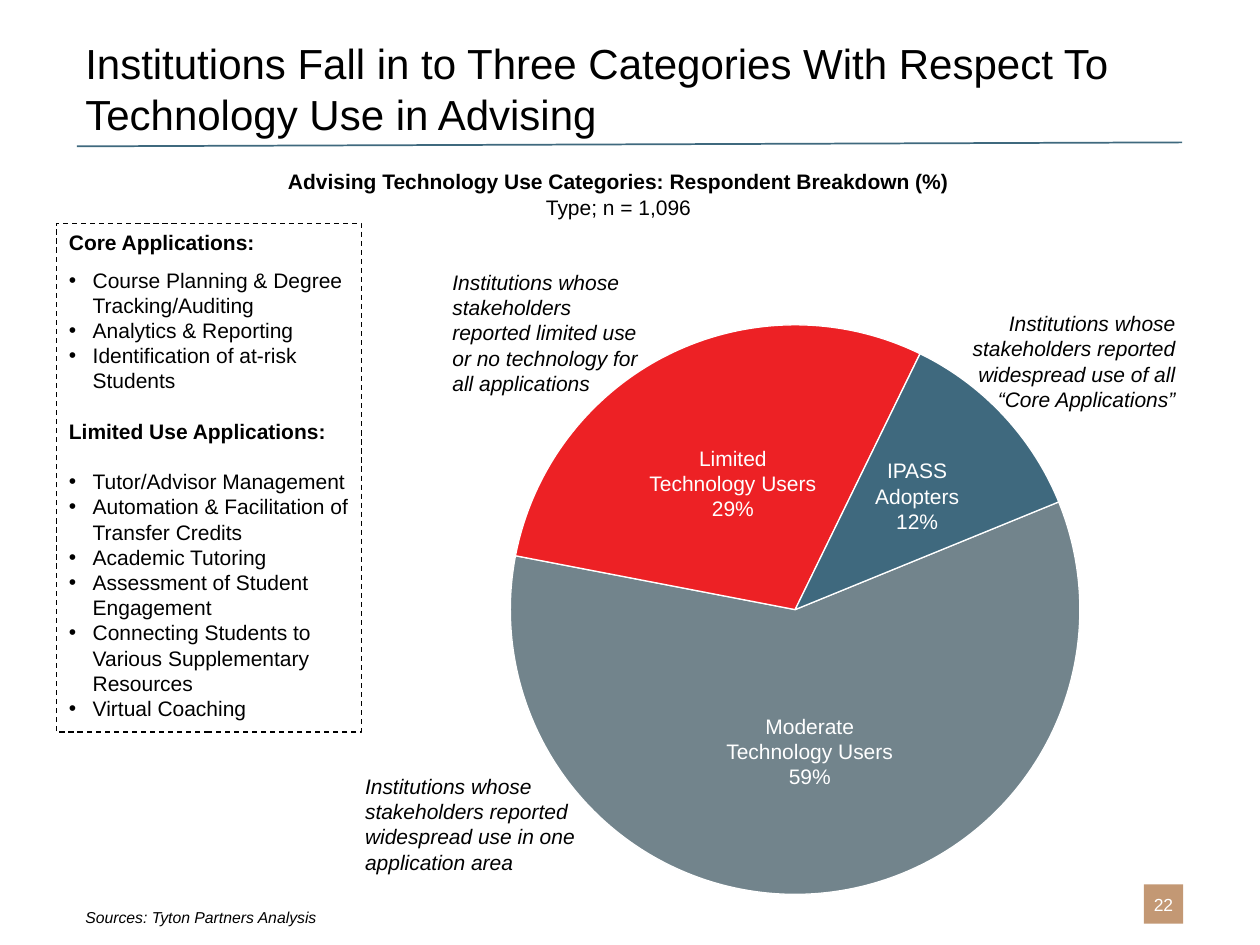
from lxml.etree import SubElement
from pptx import Presentation
from pptx.dml.color import RGBColor
from pptx.enum.dml import MSO_LINE
from pptx.enum.shapes import MSO_CONNECTOR, MSO_SHAPE
from pptx.enum.text import MSO_ANCHOR, PP_ALIGN
from pptx.oxml.ns import qn
from pptx.util import Cm, Pt

FONT = "Arial"
BLACK, WHITE = "000000", "FFFFFF"
BLUE, RED, GREY, TAN = "3F697E", "ED2125", "72848C", "C39874"
LEFT, CENTER, RIGHT = PP_ALIGN.LEFT, PP_ALIGN.CENTER, PP_ALIGN.RIGHT
TOP, MIDDLE, BOTTOM = MSO_ANCHOR.TOP, MSO_ANCHOR.MIDDLE, MSO_ANCHOR.BOTTOM

# name lines, share in %, colour, label box within the pie's box
SLICES = [
    (["Moderate", "Technology Users"], 59.2, GREY, (4.27, 7.82, 3.53, 1.55)),
    (["Limited", "Technology Users"], 29.2, RED, (2.72, 2.41, 3.53, 1.55)),
    (["IPASS", "Adopters"], 11.6, BLUE, (7.26, 2.67, 1.88, 1.55)),
]
START = 337.78  # degrees clockwise from three o'clock

# text, alignment, box relative to the pie's corner
NOTES = [
    ("Institutions whose stakeholders reported widespread use of all “Core Applications”",
     RIGHT, (8.66, -0.41, 5, 2.31)),
    ("Institutions whose stakeholders reported widespread use in one application area",
     LEFT, (-3.18, 8.92, 4.88, 2.31)),
    ("Institutions whose stakeholders reported limited use or no technology for all applications",
     LEFT, (-1.42, -1.24, 4.5, 2.82)),
]

# heading, gap after it in points, applications
GROUPS = [
    ("Core Applications:", 7.2,
     ["Course Planning & Degree Tracking/Auditing", "Analytics & Reporting",
      "Identification of at-risk Students"]),
    ("Limited Use Applications:", 14.4,
     ["Tutor/Advisor Management", "Automation & Facilitation of Transfer Credits",
      "Academic Tutoring", "Assessment of Student Engagement",
      "Connecting Students to Various Supplementary Resources", "Virtual Coaching"]),
]


def color(code):
    return RGBColor.from_string(code)


def place(x, y, w, h):
    return Cm(x), Cm(y), Cm(w), Cm(h)


def write(frame, text, size=12, ink=BLACK, bold=False, italic=False,
          align=LEFT, bullet=False, gap=0):
    """Add one paragraph, using the empty first one when there is one."""
    first = frame.paragraphs[0]
    para = frame.add_paragraph() if first.runs else first
    para.alignment = align
    if gap:
        para.space_before = Pt(gap)
    if bullet:
        props = para._p.get_or_add_pPr()
        props.set("marL", str(Cm(0.48)))
        props.set("indent", str(-Cm(0.48)))
        SubElement(props, qn("a:buFont")).set("typeface", FONT)
        SubElement(props, qn("a:buChar")).set("char", "•")
    run = para.add_run()
    run.text = text
    font = run.font
    font.name, font.size = FONT, Pt(size)
    font.bold, font.italic = bold, italic
    font.color.rgb = color(ink)


def setup(frame, anchor=TOP, wrap=True, inset=None):
    frame.word_wrap, frame.vertical_anchor = wrap, anchor
    if inset is not None:
        frame.margin_left = frame.margin_right = Cm(inset)
        frame.margin_top = frame.margin_bottom = 0
    return frame


def text_box(slide, box, **form):
    return setup(slide.shapes.add_textbox(*place(*box)).text_frame, **form)


def block(slide, kind, box, fill=None, line=None):
    shape = slide.shapes.add_shape(kind, *place(*box))
    shape.shadow.inherit = False
    if fill:
        shape.fill.solid()
        shape.fill.fore_color.rgb = color(fill)
    else:
        shape.fill.background()
    if line:
        shape.line.color.rgb = color(line)
        shape.line.width = Pt(0.75)
    else:
        shape.line.fill.background()
    return shape


def header(slide, x, y, w, h):
    frame = text_box(slide, (x, y, w, h), anchor=BOTTOM)
    write(frame, "Institutions Fall in to Three Categories With Respect To "
                 "Technology Use in Advising", size=24)
    rule = slide.shapes.add_connector(
        MSO_CONNECTOR.STRAIGHT, Cm(x + 0.08), Cm(y + h + 0.03),
        Cm(x + w - 0.04), Cm(y + h - 0.05))
    rule.line.color.rgb = color(BLUE)
    rule.line.width = Pt(1)
    SubElement(rule._element.spPr, qn("a:effectLst"))


def caption(slide, *box):
    frame = text_box(slide, box)
    write(frame, "Advising Technology Use Categories: Respondent Breakdown (%)",
          bold=True, align=CENTER)
    write(frame, "Type; n = 1,096", align=CENTER)


def panel(slide, *box):
    shape = block(slide, MSO_SHAPE.RECTANGLE, box, line=BLACK)
    shape.line.dash_style = MSO_LINE.DASH
    frame = setup(shape.text_frame)
    for order, (head, gap, items) in enumerate(GROUPS):
        write(frame, head, bold=True, gap=14.4 * order)
        for spot, item in enumerate(items):
            write(frame, item, bullet=True, gap=0 if spot else gap)


def pie(slide, x, y, size):
    angle = START
    for _, share, fill, _ in SLICES:
        wedge = block(slide, MSO_SHAPE.PIE, (x, y, size, size), fill, WHITE)
        end = (angle + share * 3.6) % 360
        # adjustments count 100000ths, angles 60000ths of a degree
        wedge.adjustments[0], wedge.adjustments[1] = angle * 0.6, end * 0.6
        angle = end
    for name, share, _, (dx, dy, w, h) in SLICES:
        frame = text_box(slide, (x + dx, y + dy, w, h),
                         anchor=MIDDLE, wrap=False, inset=0.05)
        for line in name + [f"{share:.0f}%"]:
            write(frame, line, ink=WHITE, align=CENTER)
    for text, align, (dx, dy, w, h) in NOTES:
        frame = text_box(slide, (x + dx, y + dy, w, h))
        write(frame, text, italic=True, align=align)


def footer(slide, x, y, w, h):
    frame = text_box(slide, (x, y, 17.48, h), anchor=BOTTOM)
    write(frame, "Sources: Tyton Partners Analysis", size=9, italic=True)
    side = 0.79
    badge = block(slide, MSO_SHAPE.RECTANGLE,
                  (x + w - side, y + 0.81, side, side), TAN)
    frame = setup(badge.text_frame, anchor=MIDDLE, wrap=False, inset=0)
    write(frame, "22", size=10, ink=WHITE, align=CENTER)


def main():
    deck = Presentation()
    deck.slide_width, deck.slide_height = Cm(25.4), Cm(19.05)
    slide = deck.slides.add_slide(deck.slide_layouts[6])
    header(slide, 1.47, 0.28, 22.4, 2.64)
    footer(slide, 1.47, 17.02, 22.38, 1.78)
    pie(slide, 10.29, 6.55, 11.48)
    caption(slide, 1.14, 3.28, 22.66, 1.27)
    panel(slide, 1.14, 4.5, 6.15, 10.26)
    deck.save("out.pptx")


if __name__ == "__main__":
    main()
